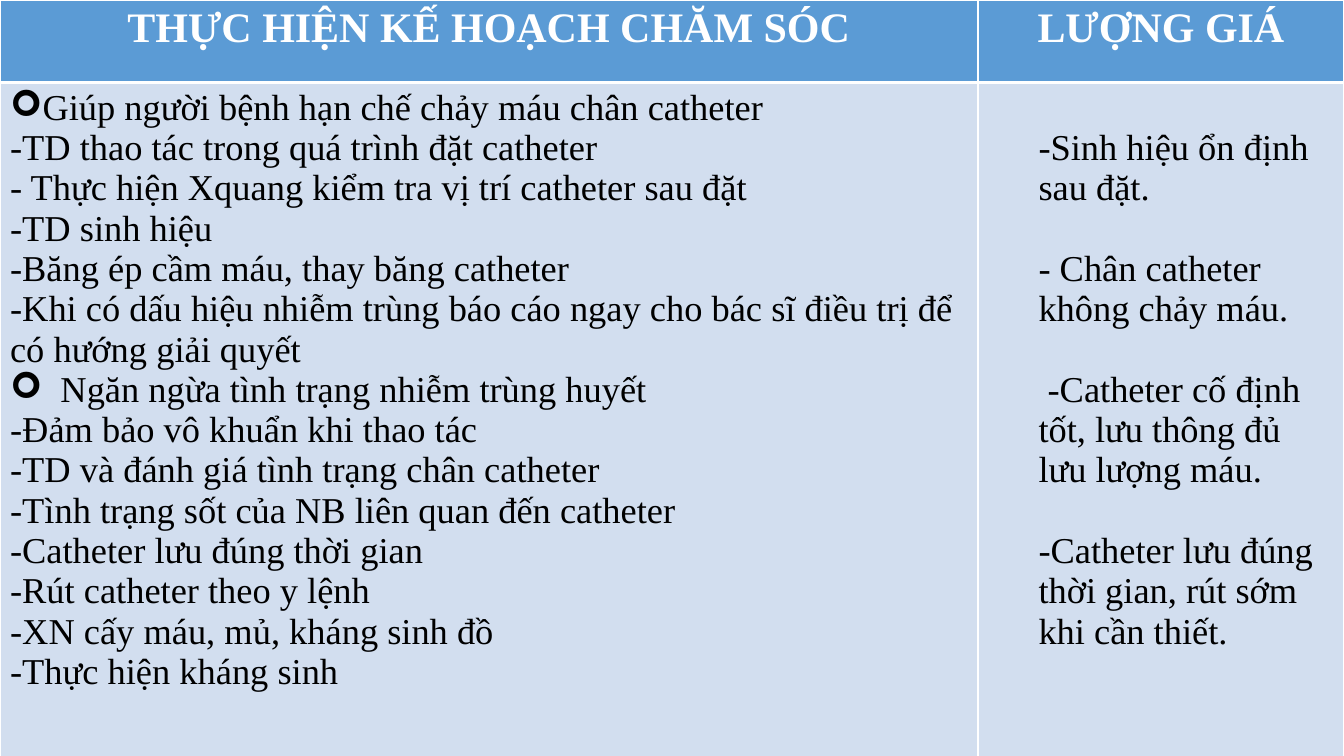
from dataclasses import dataclass

from lxml.etree import SubElement
from pptx import Presentation
from pptx.dml.color import RGBColor
from pptx.enum.text import PP_ALIGN as Align
from pptx.oxml.ns import qn
from pptx.util import Inches, Pt

COLORS = {"header": "5B9BD5", "body": "D2DEEF", "white": "FFFFFF", "black": "000000"}
FONT = "Times New Roman"
COLUMN_WIDTHS = (9.7, 3.63)
ROW_HEIGHTS = (0.82, 6.91)
THIN, THICK = 1, 3
BODY_LINE = 28.8  # height of one body line, in points
BODY_TOP = 0.45  # top margin that leaves one line free


@dataclass
class Line:
    text: str
    bullet: str = ""
    indent: float = 0
    hanging: float = 0
    level: int = 0
    space_before: float = 0


HEADERS = ("THỰC HIỆN KẾ HOẠCH CHĂM SÓC", "LƯỢNG GIÁ")

CARE_STEPS = [
    Line("Giúp người bệnh hạn chế chảy máu chân catheter", "➢", 0.31, 0.31),
    Line("-TD thao tác trong quá trình đặt catheter"),
    Line("- Thực hiện Xquang kiểm tra vị trí catheter sau đặt"),
    Line("-TD sinh hiệu"),
    Line("-Băng ép cầm máu, thay băng catheter"),
    Line("-Khi có dấu hiệu nhiễm trùng báo cáo ngay cho bác sĩ điều trị để có hướng giải quyết"),
    Line("Ngăn ngừa tình trạng nhiễm trùng huyết", "➢", 0.5, 0.5),
    Line("-Đảm bảo vô khuẩn khi thao tác"),
    Line("-TD và đánh giá tình trạng chân catheter"),
    Line("-Tình trạng sốt của NB liên quan đến catheter"),
    Line("-Catheter lưu đúng thời gian"),
    Line("-Rút catheter theo y lệnh"),
    Line("-XN cấy máu, mủ, kháng sinh đồ"),
    Line("-Thực hiện kháng sinh"),
]

OUTCOME_TEXTS = (
    "-Sinh hiệu ổn định sau đặt.",
    "- Chân catheter không chảy máu.",
    " -Catheter cố định tốt, lưu thông đủ lưu lượng máu.",
    "-Catheter lưu đúng thời gian, rút sớm khi cần thiết.",
)
OUTCOMES = [
    Line(text, indent=0.5, level=1, space_before=BODY_LINE if index else 0)
    for index, text in enumerate(OUTCOME_TEXTS)
]


def set_borders(cell, top: float, bottom: float) -> None:
    properties = cell._tc.get_or_add_tcPr()
    for side, width in (("L", THIN), ("R", THIN), ("T", top), ("B", bottom)):
        border = SubElement(properties, qn(f"a:ln{side}"), w=str(Pt(width)))
        fill = SubElement(border, qn("a:solidFill"))
        SubElement(fill, qn("a:srgbClr"), val=COLORS["white"])


def set_indent(para, line: Line) -> None:
    properties = para._p.get_or_add_pPr()
    properties.set("marL", str(Inches(line.indent)))
    properties.set("indent", str(-Inches(line.hanging)))
    if line.bullet:
        SubElement(properties, qn("a:buFont"), typeface="Wingdings")
        SubElement(properties, qn("a:buChar"), char=line.bullet)
    else:
        SubElement(properties, qn("a:buNone"))


def write_line(para, line: Line, *, size: float, color: str, bold: bool = False,
               align: Align = Align.LEFT) -> None:
    para.level = line.level
    para.alignment = align
    para.space_before = Pt(line.space_before)
    set_indent(para, line)
    span = para.add_run()
    span.text = line.text
    span.font.name = FONT
    span.font.size = Pt(size)
    span.font.bold = bold
    span.font.color.rgb = RGBColor.from_string(COLORS[color])


def fill_cell(cell, lines: list[Line], *, fill: str, top: float, bottom: float,
              **text_format) -> None:
    set_borders(cell, top, bottom)
    cell.fill.solid()
    cell.fill.fore_color.rgb = RGBColor.from_string(COLORS[fill])
    frame = cell.text_frame
    for index, line in enumerate(lines):
        para = frame.add_paragraph() if index else frame.paragraphs[0]
        write_line(para, line, **text_format)


def main() -> None:
    deck = Presentation()
    deck.slide_width, deck.slide_height = Inches(13.33), Inches(7.5)
    page = deck.slides.add_slide(deck.slide_layouts[6])

    # Table grid
    table = page.shapes.add_table(
        len(ROW_HEIGHTS), len(COLUMN_WIDTHS), 0, 0,
        Inches(sum(COLUMN_WIDTHS)), Inches(sum(ROW_HEIGHTS))).table
    table.horz_banding = False
    for column, width in zip(table.columns, COLUMN_WIDTHS):
        column.width = Inches(width)
    for row, height in zip(table.rows, ROW_HEIGHTS):
        row.height = Inches(height)

    # Header row
    for index, header in enumerate(HEADERS):
        fill_cell(table.cell(0, index), [Line(header)], fill="header", top=THIN,
                  bottom=THICK, size=30, color="white", bold=True, align=Align.CENTER)

    # Care steps and outcomes
    for index, lines in enumerate((CARE_STEPS, OUTCOMES)):
        fill_cell(table.cell(1, index), lines, fill="body", top=THICK,
                  bottom=THIN, size=26, color="black")
    table.cell(1, 1).margin_top = Inches(BODY_TOP)

    deck.save("out.pptx")


if __name__ == "__main__":
    main()
